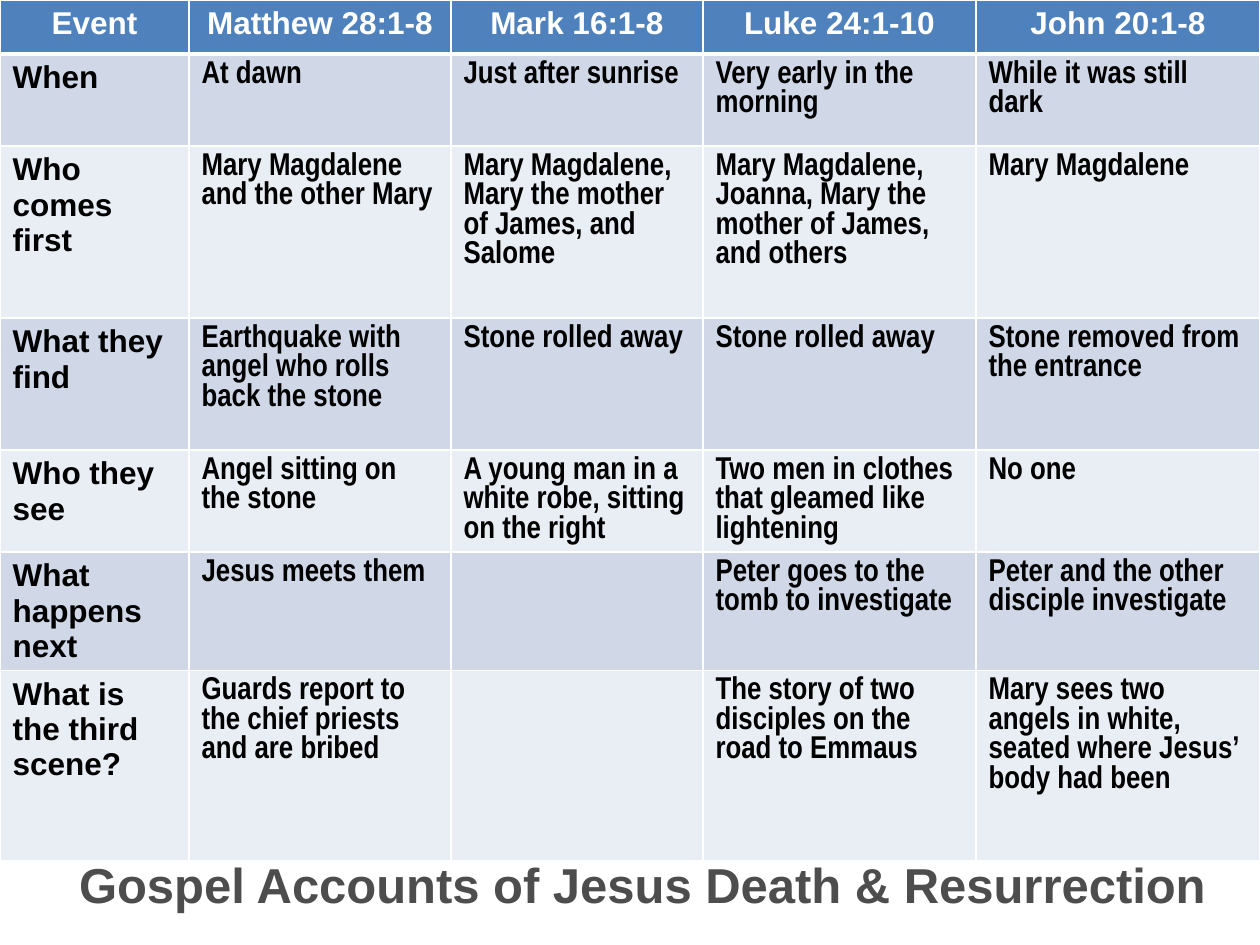
from lxml import etree
from pptx import Presentation
from pptx.dml.color import RGBColor
from pptx.enum.text import PP_ALIGN
from pptx.oxml.ns import qn
from pptx.util import Emu, Pt

CENTER, LEFT, RIGHT = PP_ALIGN.CENTER, PP_ALIGN.LEFT, PP_ALIGN.RIGHT
EMU_PER_PX = 914400 / 126
COLUMN_WIDTHS = [189, 262, 252, 273, 284]
ROW_HEIGHTS = [54, 92, 172, 132, 102, 118, 190]
HEADER_FILL, BAND_FILLS = "4F81BD", ["D0D8E8", "E9EDF4"]
ACCOUNTS = [
    ["Event", "Matthew 28:1-8", "Mark 16:1-8", "Luke 24:1-10", "John 20:1-8"],
    ["When", "At dawn", "Just after sunrise", "Very early in the morning",
     "While it was still dark"],
    ["Who comes first", "Mary Magdalene and the other Mary",
     "Mary Magdalene, Mary the mother of James, and Salome",
     "Mary Magdalene, Joanna, Mary the mother of James, and others",
     "Mary Magdalene"],
    ["What they find", "Earthquake with angel who rolls back the stone",
     "Stone rolled away", "Stone rolled away", "Stone removed from the entrance"],
    ["Who they see", "Angel sitting on the stone",
     "A young man in a white robe, sitting on the right",
     "Two men in clothes that gleamed like lightening", "No one"],
    ["What happens next", "Jesus meets them", "",
     "Peter goes to the tomb to investigate",
     "Peter and the other disciple investigate"],
    ["What is the third scene?", "Guards report to the chief priests and are bribed", "",
     "The story of two disciples on the road to Emmaus",
     "Mary sees two angels in white, seated where Jesus’ body had been"],
]


def px(length):
    return Emu(round(length * EMU_PER_PX))


def color(hex_string):
    return RGBColor.from_string(hex_string)


def write(text_frame, text, font_name, size, hex_string, alignment):
    paragraph = text_frame.paragraphs[0]
    paragraph.text = text
    paragraph.alignment = alignment
    font = paragraph.font
    font.name, font.size, font.bold = font_name, Pt(size), True
    font.color.rgb = color(hex_string)


def set_borders(cell, widths):
    """Draw white borders; widths maps a side (L, R, T, B) to points."""
    properties = cell._tc.get_or_add_tcPr()
    for side, width in widths.items():
        line = etree.SubElement(properties, qn(f"a:ln{side}"), w=str(Pt(width)))
        fill = etree.SubElement(line, qn("a:solidFill"))
        etree.SubElement(fill, qn("a:srgbClr"), val="FFFFFF")


def add_accounts_table(slide, left, top):
    frame = slide.shapes.add_table(
        len(ROW_HEIGHTS), len(COLUMN_WIDTHS), px(left), px(top),
        px(sum(COLUMN_WIDTHS)), px(sum(ROW_HEIGHTS)))
    table = frame.table
    for column, width in zip(table.columns, COLUMN_WIDTHS):
        column.width = px(width)
    for row, height in zip(table.rows, ROW_HEIGHTS):
        row.height = px(height)
    for row_index, texts in enumerate(ACCOUNTS):
        is_header = row_index == 0
        fill = HEADER_FILL if is_header else BAND_FILLS[(row_index - 1) % 2]
        borders = {"L": 1, "R": 1, "T": 3 if row_index == 1 else 1,
                   "B": 3 if is_header else 1}
        for column_index, text in enumerate(texts):
            cell = table.cell(row_index, column_index)
            set_borders(cell, borders)
            cell.fill.solid()
            cell.fill.fore_color.rgb = color(fill)
            is_label = is_header or column_index == 0
            write(cell.text_frame, text, "Arial" if is_label else "Arial Narrow", 18,
                  "FFFFFF" if is_header else "000000", CENTER if is_header else LEFT)


def add_title(slide, left, top, width, height):
    box = slide.shapes.add_textbox(px(left), px(top), px(width), px(height))
    box.text_frame.word_wrap = True
    write(box.text_frame, "Gospel Accounts of Jesus Death & Resurrection",
          "Arial", 28, "4D4D4D", RIGHT)


def main():
    presentation = Presentation()
    presentation.slide_width, presentation.slide_height = px(1260), px(945)
    slide = presentation.slides.add_slide(presentation.slide_layouts[6])
    add_accounts_table(slide, 0, 0)
    add_title(slide, 0, 848, 1218, 97)
    presentation.save("out.pptx")


if __name__ == "__main__":
    main()
